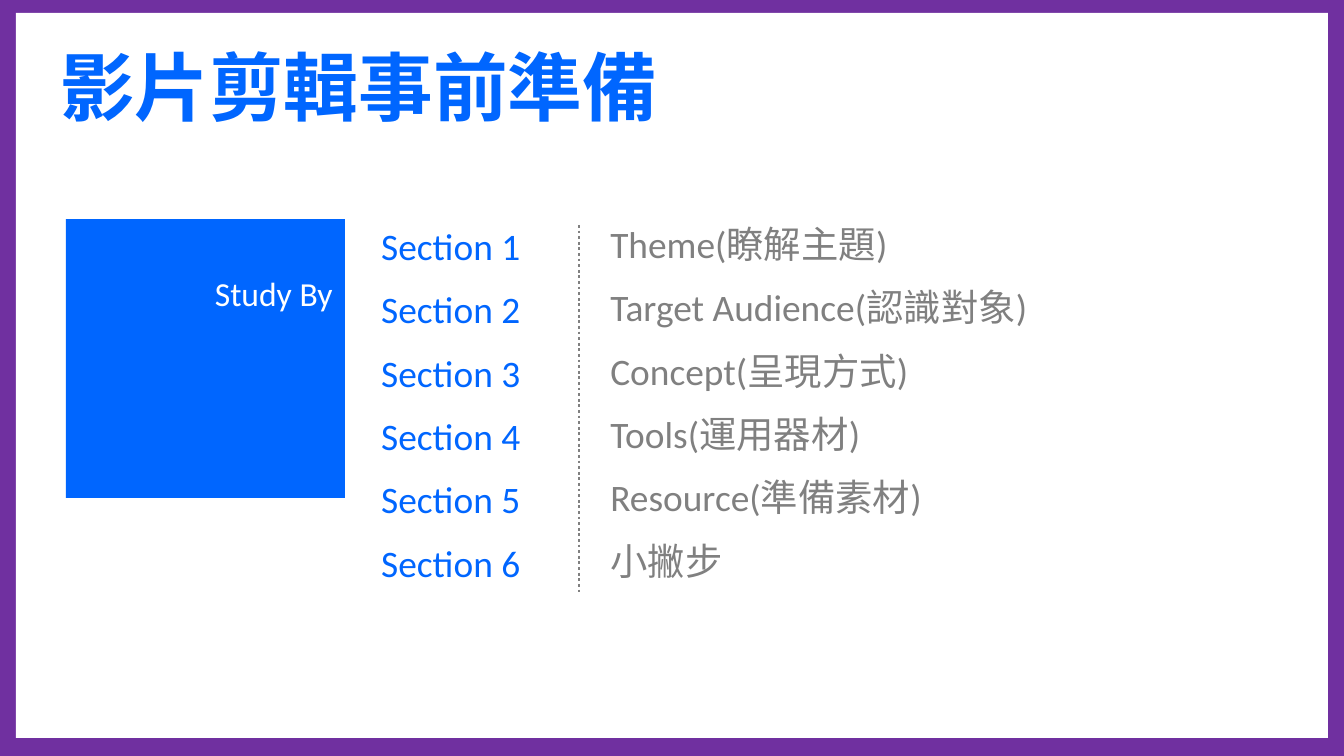
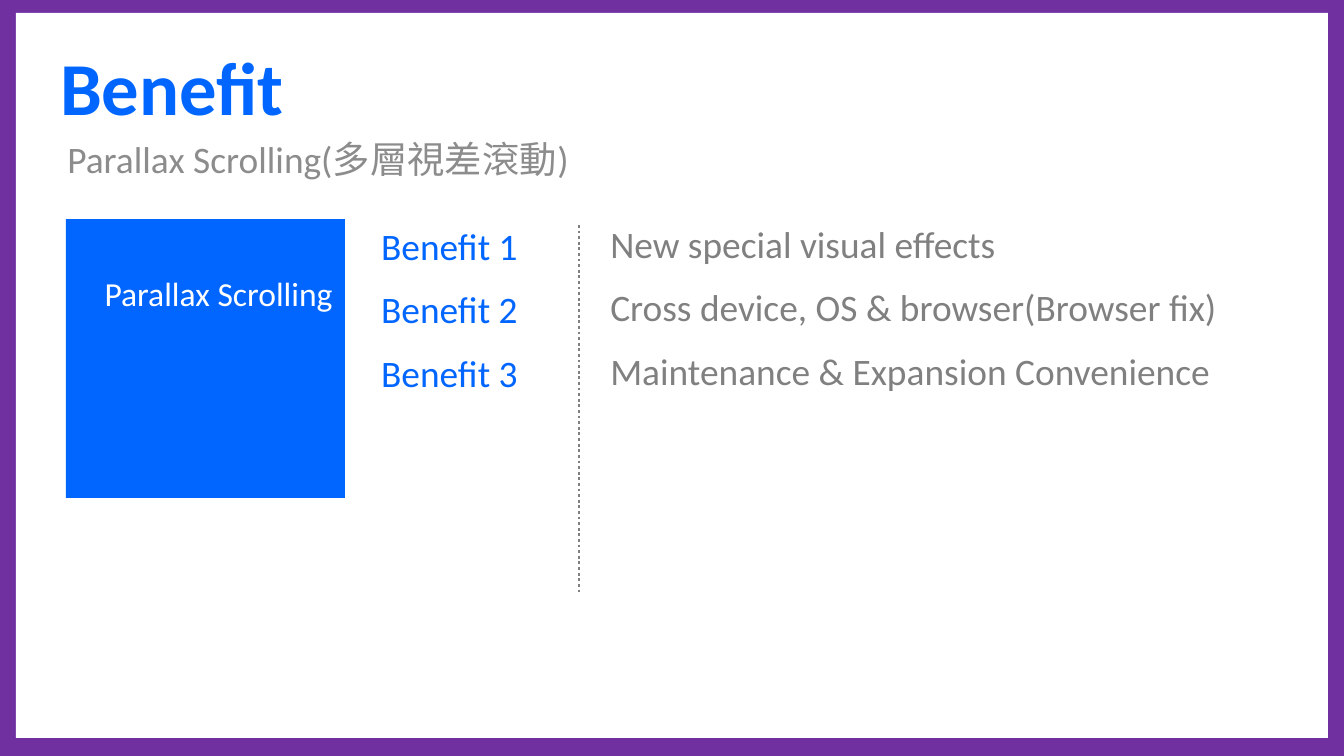
from lxml.etree import SubElement
from pptx import Presentation
from pptx.dml.color import RGBColor
from pptx.enum.dml import MSO_LINE
from pptx.enum.shapes import MSO_CONNECTOR, MSO_SHAPE
from pptx.enum.text import MSO_ANCHOR, PP_ALIGN
from pptx.oxml.ns import qn
from pptx.util import Pt

LATIN = "Calibri"
CJK = "Noto Sans CJK SC"
COLORS = {
    "frame": "7030A0",
    "panel": "FFFFFF",
    "accent": "0066FF",
    "detail": "808080",
    "subtitle": "8C8C8C",
    "caption": "FFFFFF",
}

SLIDES = [
    {
        "title": ("影片剪輯事前準備", CJK),
        "subtitle": [],
        "caption": "Study By",
        "label": "Section",
        "details": [
            "Theme(瞭解主題)",
            "Target Audience(認識對象)",
            "Concept(呈現方式)",
            "Tools(運用器材)",
            "Resource(準備素材)",
            "小撇步",
        ],
    },
    {
        "title": ("Benefit", LATIN),
        "subtitle": [("Parallax Scrolling(", LATIN), ("多層視差滾動", CJK), (")", LATIN)],
        "caption": "Parallax Scrolling",
        "label": "Benefit",
        "details": [
            "New special visual effects",
            "Cross device, OS & browser(Browser fix)",
            "Maintenance & Expansion Convenience",
        ],
    },
]

SCALE = 914400 / 134.4
SLIDE_SIZE = (1344, 756)
PANEL = (16, 13, 1312, 725)
SQUARE = (66, 219, 279, 279)
CAPTION = (38, 269, 308, 51)
TITLE = (47, 28, 1215, 116)
SUBTITLE = (54, 129, 1274, 59)
LABELS = (368, 220, 323, 375)
DETAILS = (597, 218, 731, 375)
DIVIDER = (579, 225, 579, 593)


def px(*lengths):
    return [round(length * SCALE) for length in lengths]


def color(name):
    return RGBColor.from_string(COLORS[name])


def add_rectangle(shapes, place, fill):
    rectangle = shapes.add_shape(MSO_SHAPE.RECTANGLE, *px(*place))
    rectangle.shadow.inherit = False
    rectangle.fill.solid()
    rectangle.fill.fore_color.rgb = color(fill)
    rectangle.line.fill.background()


def style(paragraph, size, fill, font=LATIN, bold=False):
    paragraph.font.size = Pt(size)
    paragraph.font.name = font
    paragraph.font.bold = bold
    paragraph.font.color.rgb = color(fill)


def add_box(shapes, place, anchor=MSO_ANCHOR.TOP):
    frame = shapes.add_textbox(*px(*place)).text_frame
    frame.word_wrap = True
    frame.vertical_anchor = anchor
    return frame


def add_list(shapes, place, lines, fill):
    frame = add_box(shapes, place)
    frame.text = "\n".join(lines)
    for paragraph in frame.paragraphs:
        style(paragraph, 20, fill)
        paragraph.line_spacing = Pt(22)
        paragraph.space_after = Pt(12)


def add_badge(page, caption):
    badge = page.shapes.add_group_shape()
    add_rectangle(badge.shapes, SQUARE, "accent")
    paragraph = add_box(badge.shapes, CAPTION).paragraphs[0]
    paragraph.text = caption
    paragraph.alignment = PP_ALIGN.RIGHT
    paragraph.line_spacing = Pt(20)
    style(paragraph, 18, "caption")


def add_heading(page, title, subtitle):
    text, font = title
    paragraph = add_box(page.shapes, TITLE, MSO_ANCHOR.MIDDLE).paragraphs[0]
    paragraph.text = text
    style(paragraph, 40, "accent", font, bold=True)
    if subtitle:
        paragraph = add_box(page.shapes, SUBTITLE, MSO_ANCHOR.MIDDLE).paragraphs[0]
        style(paragraph, 20, "subtitle")
        for text, font in subtitle:
            span = paragraph.add_run()
            span.text = text
            span.font.name = font


def add_divider(page):
    divider = page.shapes.add_connector(MSO_CONNECTOR.STRAIGHT, *px(*DIVIDER))
    divider.line.color.rgb = color("detail")
    divider.line.width = Pt(1.5)
    divider.line.dash_style = MSO_LINE.ROUND_DOT
    SubElement(divider._element.spPr, qn("a:effectLst"))


def add_page(deck, content):
    page = deck.slides.add_slide(deck.slide_layouts[6])
    page.background.fill.solid()
    page.background.fill.fore_color.rgb = color("frame")
    add_rectangle(page.shapes, PANEL, "panel")
    add_badge(page, content["caption"])
    add_heading(page, content["title"], content["subtitle"])
    details = content["details"]
    labels = [f"{content['label']} {number}" for number in range(1, len(details) + 1)]
    add_list(page.shapes, LABELS, labels, "accent")
    add_divider(page)
    add_list(page.shapes, DETAILS, details, "detail")


def main():
    deck = Presentation()
    deck.slide_width, deck.slide_height = px(*SLIDE_SIZE)
    for content in SLIDES:
        add_page(deck, content)
    deck.save("out.pptx")


if __name__ == "__main__":
    main()
